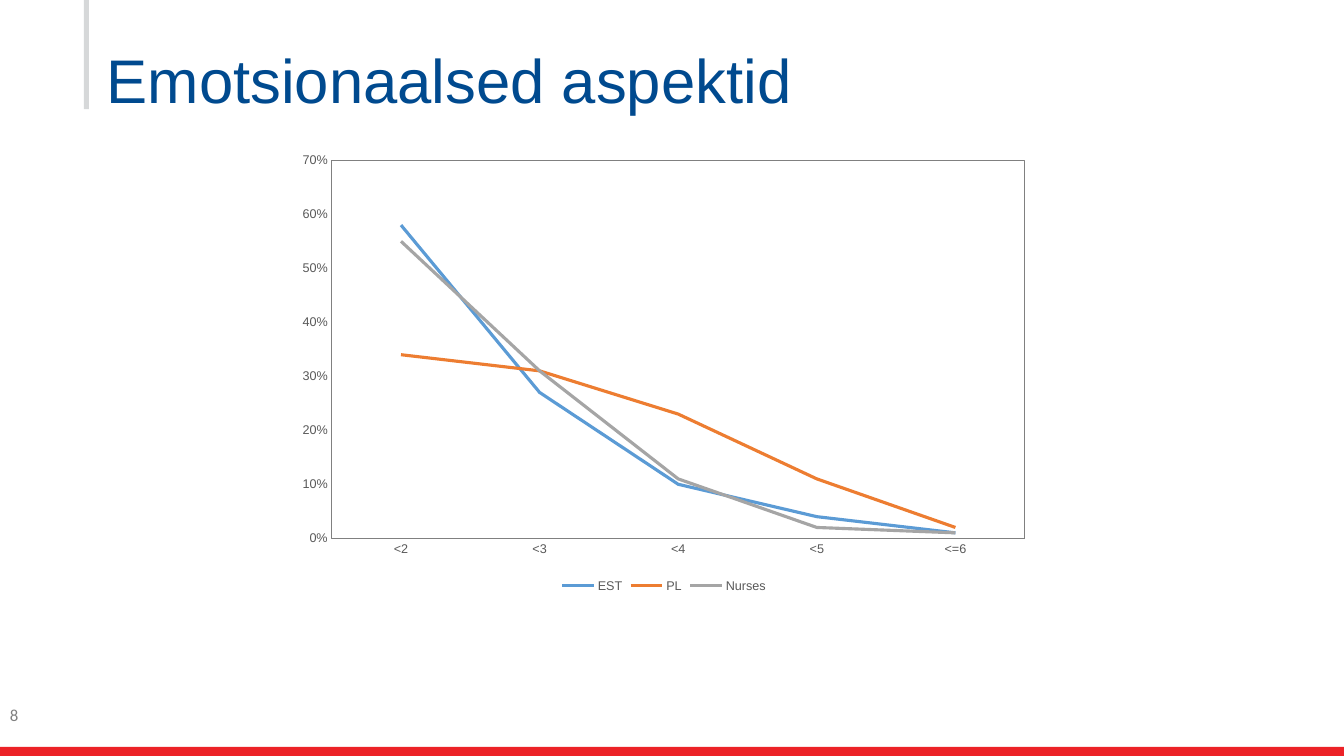
from lxml import etree
from pptx import Presentation
from pptx.chart.data import CategoryChartData
from pptx.dml.color import RGBColor
from pptx.enum.chart import XL_CHART_TYPE, XL_LEGEND_POSITION, XL_TICK_MARK
from pptx.enum.shapes import MSO_SHAPE
from pptx.enum.text import MSO_ANCHOR, MSO_AUTO_SIZE, PP_ALIGN
from pptx.util import Inches, Pt

LINE = XL_CHART_TYPE.LINE
BOTTOM = XL_LEGEND_POSITION.BOTTOM
NO_TICK = XL_TICK_MARK.NONE
RECTANGLE = MSO_SHAPE.RECTANGLE
TOP, MIDDLE = MSO_ANCHOR.TOP, MSO_ANCHOR.MIDDLE
NO_AUTOFIT = MSO_AUTO_SIZE.NONE
LEFT = PP_ALIGN.LEFT

COLUMNS, ROWS = 160, 90
TITLE_ONLY = 5
RED, NAVY, PALE, GREY, DARK = "EC2227", "004A8F", "D6D8D9", "808080", "595959"
CATEGORIES = ["<2", "<3", "<4", "<5", "<=6"]
SERIES = {
    "EST": ("5B9BD5", [0.58, 0.27, 0.10, 0.04, 0.01]),
    "PL": ("ED7D31", [0.34, 0.31, 0.23, 0.11, 0.02]),
    "Nurses": ("A5A5A5", [0.55, 0.31, 0.11, 0.02, 0.01]),
}
PLOT_SHARES = {"x": 0.058, "y": 0.035, "w": 0.922, "h": 0.835}
CHART_NS = "http://schemas.openxmlformats.org/drawingml/2006/chart"
DRAWING_NS = "http://schemas.openxmlformats.org/drawingml/2006/main"


def colour(value):
    return RGBColor.from_string(value)


def apply(target, values):
    for name, value in values.items():
        setattr(target, name, value)


class SlideBuilder:
    """Holds the style and current slide, placing elements on a grid."""

    def __init__(self, deck):
        self.page = deck.slides.add_slide(deck.slide_layouts[TITLE_ONLY])
        self.column = deck.slide_width / COLUMNS
        self.row = deck.slide_height / ROWS
        self.font = "Arial"

    def place(self, left, top, width, height):
        return (round(left * self.column), round(top * self.row),
                round(width * self.column), round(height * self.row))

    def style_font(self, font, size, value, name=None):
        apply(font, {"name": name or self.font, "size": Pt(size), "bold": False})
        font.color.rgb = colour(value)

    def bar(self, area, fill):
        box = self.page.shapes.add_shape(RECTANGLE, *self.place(*area))
        box.shadow.inherit = False
        box.fill.solid()
        box.fill.fore_color.rgb = colour(fill)
        box.line.fill.background()

    def set_text(self, box, text, size, value, name=None, spacing=1.0, **frame):
        apply(box.text_frame, {"word_wrap": True, "auto_size": NO_AUTOFIT, **frame})
        para = box.text_frame.paragraphs[0]
        apply(para, {"alignment": LEFT, "line_spacing": spacing})
        span = para.add_run()
        span.text = text
        self.style_font(span.font, size, value, name)

    def title(self, area, text):
        box = self.page.shapes.title
        apply(box, dict(zip(("left", "top", "width", "height"), self.place(*area))))
        self.set_text(box, text, 44, NAVY, spacing=0.9,
                      vertical_anchor=TOP, margin_top=Inches(0.08))

    def page_number(self, area, text):
        box = self.page.shapes.add_textbox(*self.place(*area))
        self.set_text(box, text, 12, GREY, "Calibri", vertical_anchor=MIDDLE)

    def line_chart(self, area, categories, series):
        data = CategoryChartData(number_format="0%")
        data.categories = categories
        for name, (_, values) in series.items():
            data.add_series(name, values)
        frame = self.page.shapes.add_chart(LINE, *self.place(*area), data)
        chart = frame.chart
        apply(chart, {"has_title": False, "has_legend": True})
        self.style_font(chart.font, 10, "000000")
        apply(chart.legend, {"position": BOTTOM, "include_in_layout": False})
        self.style_font(chart.legend.font, 9, DARK)
        for line in chart.plots[0].series:
            line.smooth = False
            line.format.line.width = Pt(2.25)
            line.format.line.color.rgb = colour(series[line.name][0])
        self.axes(chart)
        self.frame_plot(chart)

    def axes(self, chart):
        for axis in (chart.category_axis, chart.value_axis):
            apply(axis, {"major_tick_mark": NO_TICK, "minor_tick_mark": NO_TICK,
                         "has_major_gridlines": False})
            self.style_font(axis.tick_labels.font, 9, DARK)
        baseline = chart.category_axis.format.line
        baseline.width = Pt(0.75)
        baseline.color.rgb = colour(GREY)
        apply(chart.value_axis, {"minimum_scale": 0, "maximum_scale": 0.7, "major_unit": 0.1})
        apply(chart.value_axis.tick_labels,
              {"number_format": "0%", "number_format_is_linked": False})
        chart.value_axis.format.line.fill.background()

    def frame_plot(self, chart):
        plot = chart._chartSpace.chart.plotArea
        for layout in plot.findall(f"{{{CHART_NS}}}layout"):
            plot.remove(layout)
        modes = "".join(f'<c:{side}Mode val="edge"/>' for side in "xy")
        shares = "".join(f'<c:{side} val="{share}"/>' for side, share in PLOT_SHARES.items())
        plot.insert(0, etree.fromstring(
            f'<c:layout xmlns:c="{CHART_NS}"><c:manualLayout><c:layoutTarget val="inner"/>'
            f'{modes}{shares}</c:manualLayout></c:layout>'))
        plot.append(etree.fromstring(
            f'<c:spPr xmlns:c="{CHART_NS}" xmlns:a="{DRAWING_NS}"><a:noFill/>'
            f'<a:ln w="{Pt(0.75)}"><a:solidFill><a:srgbClr val="{GREY}"/></a:solidFill></a:ln>'
            '</c:spPr>'))


def main():
    deck = Presentation()
    apply(deck, {"slide_width": Inches(13.33), "slide_height": Inches(7.5)})
    builder = SlideBuilder(deck)
    builder.bar((0, 88.9, COLUMNS, 1.1), RED)
    builder.bar((10, 0, 0.6, 13), PALE)
    builder.title((11.5, 5, 138, 12.1), "Emotsionaalsed aspektid")
    builder.page_number((0, 82.7, 36, 4.8), "8")
    builder.line_chart((34.3, 17.2, 89.5, 53.9), CATEGORIES, SERIES)
    deck.save("out.pptx")


if __name__ == "__main__":
    main()
